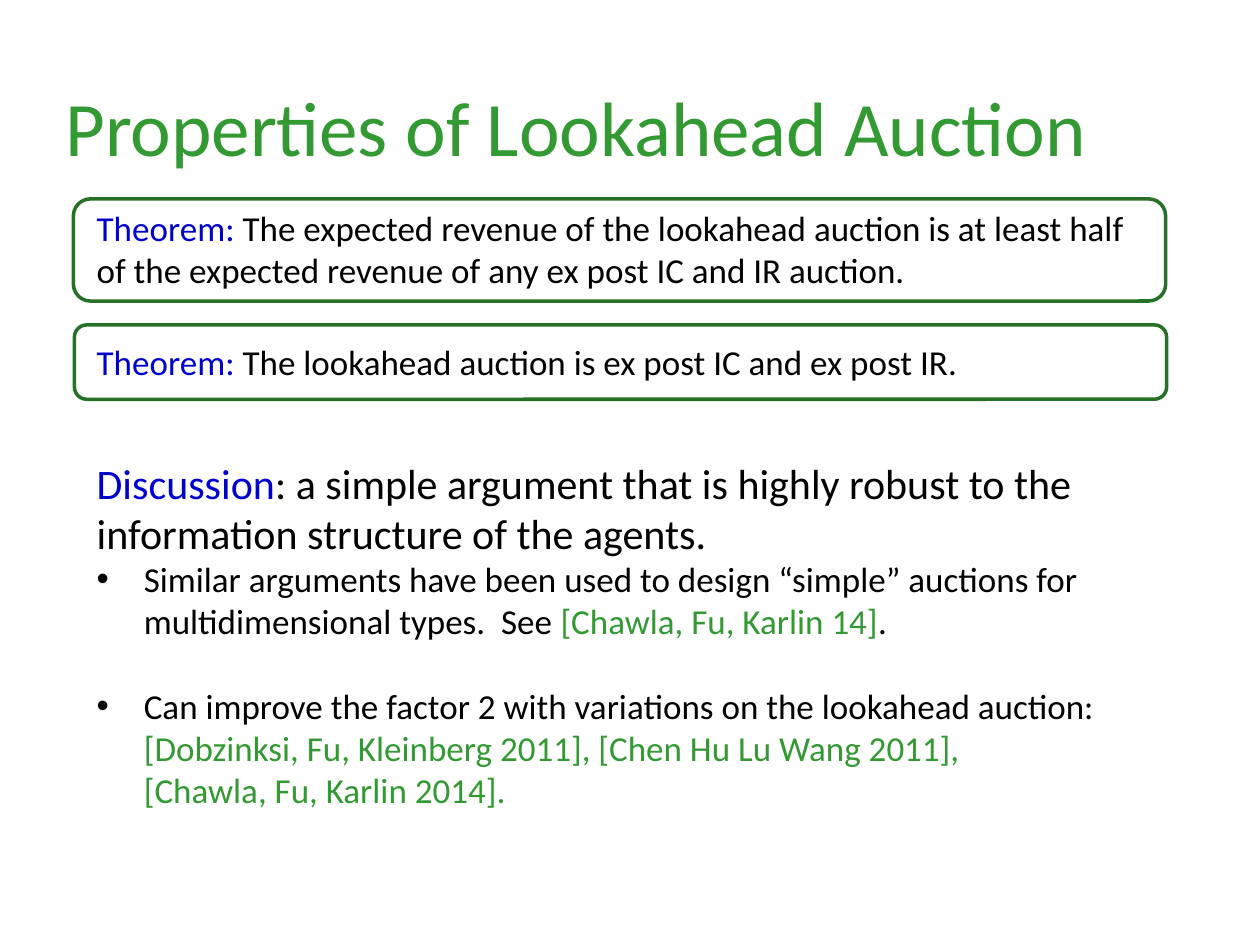
from dataclasses import dataclass

from lxml.etree import SubElement
from pptx import Presentation
from pptx.dml.color import RGBColor
from pptx.enum.shapes import MSO_SHAPE
from pptx.oxml.ns import qn
from pptx.slide import Slide
from pptx.text.text import _Paragraph
from pptx.util import Cm, Pt

GREEN = RGBColor(0x33, 0x99, 0x33)
DARK_GREEN = RGBColor(0x26, 0x71, 0x26)
BLUE = RGBColor(0x00, 0x00, 0xCC)
BLACK = RGBColor(0x00, 0x00, 0x00)
FONT = "Calibri"
BULLET_INDENT = Cm(0.95)
TEXT_LEFT = 1.7


@dataclass(frozen=True)
class Area:
    left: float
    top: float
    width: float
    height: float

    def lengths(self) -> tuple[Cm, Cm, Cm, Cm]:
        return Cm(self.left), Cm(self.top), Cm(self.width), Cm(self.height)


@dataclass(frozen=True)
class Passage:
    size: float
    runs: tuple[tuple[str, RGBColor], ...]
    bulleted: bool = False
    space_before: float = 0


@dataclass(frozen=True)
class Theorem:
    statement: str
    text_area: Area
    frame_area: Area


TITLE = Passage(44, (("Properties of Lookahead Auction", GREEN),))
TITLE_AREA = Area(1.07, 1.47, 21.34, 2.13)

THEOREMS = (
    Theorem(
        " The expected revenue of the lookahead auction is at least half \n"
        "of the expected revenue of any ex post IC and IR auction.",
        Area(TEXT_LEFT, 4.04, 22.63, 1.96),
        Area(1.48, 4.01, 22.02, 2.06),
    ),
    Theorem(
        " The lookahead auction is ex post IC and ex post IR.",
        Area(TEXT_LEFT, 6.73, 22.63, 1.12),
        Area(1.5, 6.55, 22.02, 1.5),
    ),
)

DISCUSSION_AREA = Area(TEXT_LEFT, 9.09, 22, 7.44)
DISCUSSION = (
    Passage(24, (
        ("Discussion", BLUE),
        (": a simple argument that is highly robust to the "
         "information structure of the agents.", BLACK),
    )),
    Passage(20, (
        ("Similar arguments have been used to design “simple” auctions for "
         "multidimensional types.  See ", BLACK),
        ("[Chawla, Fu, Karlin 14]", GREEN),
        (".", BLACK),
    ), bulleted=True),
    Passage(20, (
        ("Can improve the factor 2 with variations on the lookahead auction: \n", BLACK),
        ("[Dobzinksi, Fu, Kleinberg 2011], [Chen Hu Lu Wang 2011], \n"
         "[Chawla, Fu, Karlin 2014].", GREEN),
    ), bulleted=True, space_before=24.4),
)


def add_bullet(paragraph: _Paragraph) -> None:
    properties = paragraph._p.get_or_add_pPr()
    properties.set("marL", str(BULLET_INDENT))
    properties.set("indent", str(-BULLET_INDENT))
    color = SubElement(properties, qn("a:buClr"))
    SubElement(color, qn("a:srgbClr"), val=str(BLACK))
    SubElement(properties, qn("a:buFont"), typeface="Arial")
    SubElement(properties, qn("a:buChar"), char="•")


def write_passage(paragraph: _Paragraph, passage: Passage) -> None:
    paragraph.space_before = Pt(passage.space_before)
    if passage.bulleted:
        add_bullet(paragraph)
    for text, color in passage.runs:
        for index, line in enumerate(text.split("\n")):
            if index:
                paragraph.add_line_break()
            if line:
                run = paragraph.add_run()
                run.text = line
                run.font.name = FONT
                run.font.size = Pt(passage.size)
                run.font.color.rgb = color


def add_text(slide: Slide, area: Area, *passages: Passage, wrap: bool = True) -> None:
    text_frame = slide.shapes.add_textbox(*area.lengths()).text_frame
    text_frame.word_wrap = wrap
    for index, passage in enumerate(passages):
        paragraph = text_frame.add_paragraph() if index else text_frame.paragraphs[0]
        write_passage(paragraph, passage)


def add_theorem(slide: Slide, theorem: Theorem) -> None:
    passage = Passage(20, (("Theorem:", BLUE), (theorem.statement, BLACK)))
    add_text(slide, theorem.text_area, passage)
    frame = slide.shapes.add_shape(
        MSO_SHAPE.ROUNDED_RECTANGLE, *theorem.frame_area.lengths()
    )
    frame.shadow.inherit = False
    frame.fill.background()
    frame.line.color.rgb = DARK_GREEN
    frame.line.width = Pt(2)


def main() -> None:
    presentation = Presentation()
    presentation.slide_width = Cm(25.4)
    presentation.slide_height = Cm(19.05)
    slide = presentation.slides.add_slide(presentation.slide_layouts[6])
    add_text(slide, TITLE_AREA, TITLE, wrap=False)
    add_text(slide, DISCUSSION_AREA, *DISCUSSION)
    for theorem in THEOREMS:
        add_theorem(slide, theorem)
    presentation.save("out.pptx")


if __name__ == "__main__":
    main()
